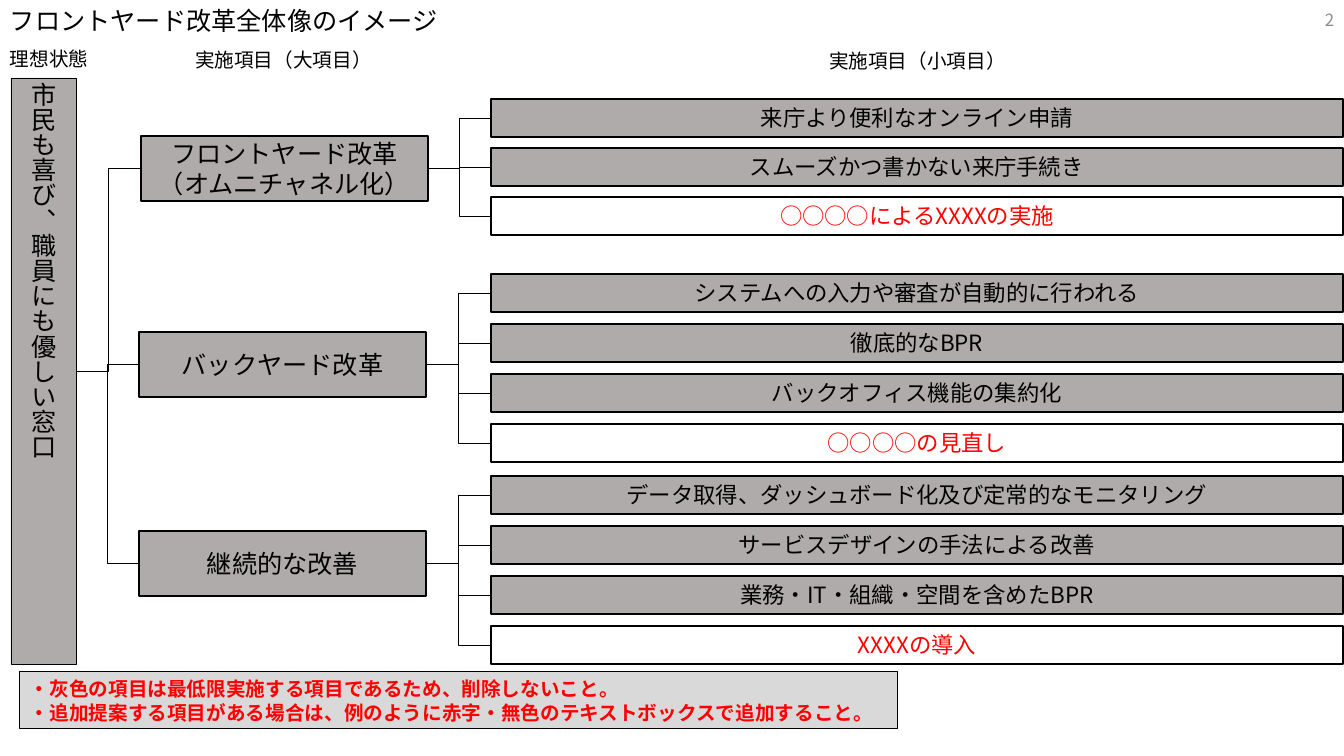
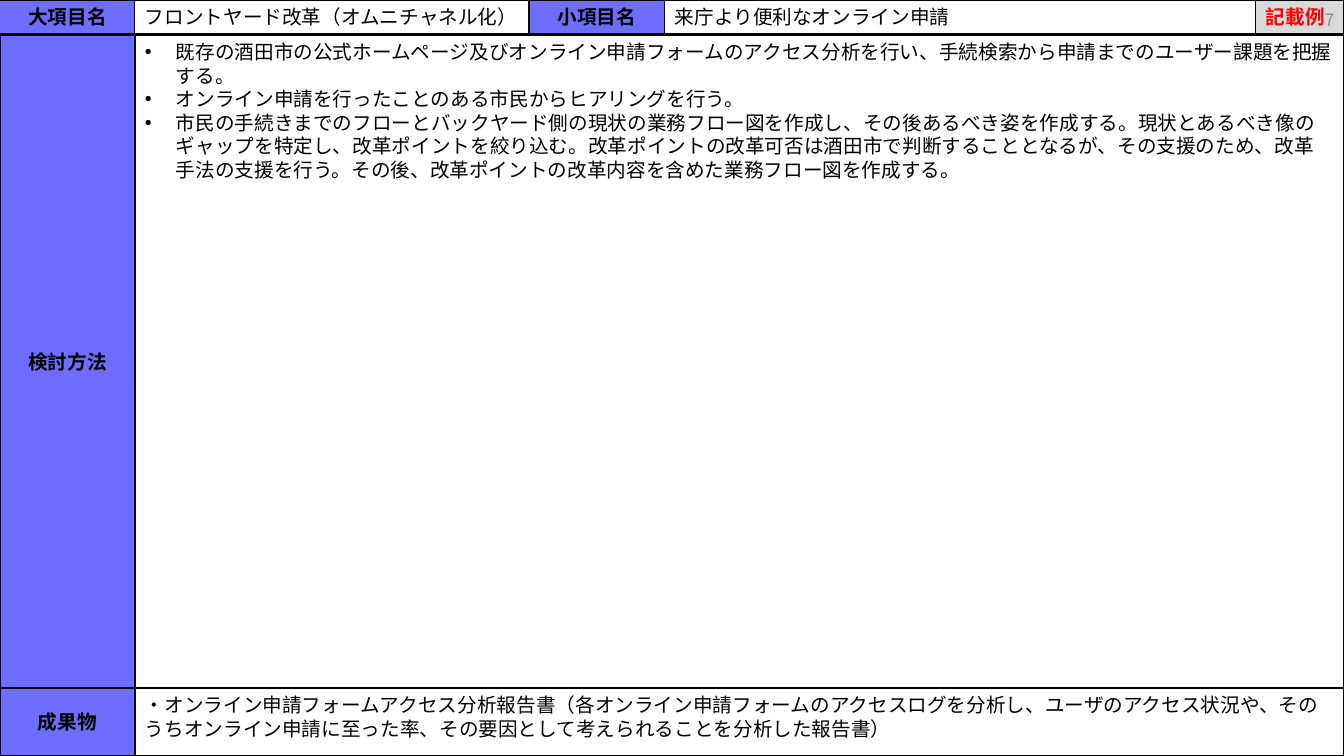
from lxml import etree
from pptx import Presentation
from pptx.dml.color import RGBColor
from pptx.enum.shapes import MSO_CONNECTOR, MSO_SHAPE
from pptx.enum.text import MSO_ANCHOR, PP_ALIGN
from pptx.oxml.ns import qn
from pptx.util import Emu, Pt

RECT, ELBOW = MSO_SHAPE.RECTANGLE, MSO_CONNECTOR.ELBOW
LEFT, MID, RIGHT = PP_ALIGN.LEFT, PP_ALIGN.CENTER, PP_ALIGN.RIGHT
TOP, CENTER = MSO_ANCHOR.TOP, MSO_ANCHOR.MIDDLE
WIDE, HIGH = 1344, 756
SCALE = 12192000 / WIDE
FONT = "Noto Sans CJK JP"
INK = {"black": "000000", "red": "FF0000", "gray": "AFABAB",
       "pale": "D9D9D9", "blue": "6D6DFF", "page": "8C8C8C"}


def px(n):
    return Emu(round(n * SCALE))


def box(slide, area, text, size=14, fill=None, line=None, ink="black",
        bold=False, align=LEFT, anchor=TOP):
    """Add a text box, or a rectangle when a line width is given."""
    place = [px(n) for n in area]
    if line:
        shape = slide.shapes.add_shape(RECT, *place)
        shape.shadow.inherit = False
        shape.line.color.rgb = RGBColor.from_string(INK["black"])
        shape.line.width = Pt(line)
        if fill:
            shape.fill.solid()
            shape.fill.fore_color.rgb = RGBColor.from_string(INK[fill])
        else:
            shape.fill.background()
    else:
        shape = slide.shapes.add_textbox(*place)
    frame = shape.text_frame
    frame.word_wrap = True
    frame.vertical_anchor = anchor
    frame.text = text
    for para in frame.paragraphs:
        para.alignment = align
        for run in para.runs:
            font = run.font
            font.name, font.size, font.bold = FONT, Pt(size), bold
            font.color.rgb = RGBColor.from_string(INK[ink])
            east = etree.SubElement(font._element, qn("a:ea"))
            east.set("typeface", FONT)
    return shape


deck = Presentation()
deck.slide_width, deck.slide_height = px(WIDE), px(HIGH)
blank = deck.slide_layouts[6]

# Overview tree
tree = deck.slides.add_slide(blank)
box(tree, (0, 0, WIDE, 40), "フロントヤード改革全体像のイメージ", 18)
for x, y, w, text, align in [
        (0, 42, 108, "理想状態", LEFT),
        (141, 43, 285, "実施項目（大項目）", MID),
        (775, 44, 285, "実施項目（小項目）", MID)]:
    box(tree, (x, y, w, 34), text, align=align)

goal = box(tree, (11, 78, 65, 586), "市民も喜び、職員にも優しい窓口", 18,
           "gray", 0.25, anchor=CENTER)
frame = goal.text_frame
frame.margin_left = frame.margin_right = px(4)
frame.margin_top = frame.margin_bottom = px(4)
frame._txBody.bodyPr.set("vert", "eaVert")

# Each branch: left, top, name, first row, row step, rows (the last is an added one)
branches = [
    (141, 136, "フロントヤード改革\n（オムニチャネル化）", 99, 49, [
        "来庁より便利なオンライン申請",
        "スムーズかつ書かない来庁手続き",
        "○○○○によるXXXXの実施"]),
    (139, 332, "バックヤード改革", 274, 50, [
        "システムへの入力や審査が自動的に行われる",
        "徹底的なBPR",
        "バックオフィス機能の集約化",
        "○○○○の見直し"]),
    (139, 531, "継続的な改善", 476, 50, [
        "データ取得、ダッシュボード化及び定常的なモニタリング",
        "サービスデザインの手法による改善",
        "業務・IT・組織・空間を含めたBPR",
        "XXXXの導入"]),
]
pairs = []
for x, y, name, first, step, rows in branches:
    main = box(tree, (x, y, 287, 65), name, 18, "gray", 1,
               align=MID, anchor=CENTER)
    pairs.append((goal, main))
    for i, text in enumerate(rows):
        extra = i == len(rows) - 1
        row = box(tree, (491, first + i * step, 852, 38), text, 16,
                  None if extra else "gray", 1, "red" if extra else "black",
                  align=MID, anchor=CENTER)
        pairs.append((main, row))

for start, end in pairs:
    wire = tree.shapes.add_connector(ELBOW, 0, 0, 0, 0)
    wire.begin_connect(start, 3)
    wire.end_connect(end, 1)
    wire.line.color.rgb = RGBColor.from_string(INK["black"])
    wire.line.width = Pt(0.5)
    etree.SubElement(wire._element.spPr, qn("a:effectLst"))

box(tree, (20, 672, 878, 57),
    "・灰色の項目は最低限実施する項目であるため、削除しないこと。\n"
    "・追加提案する項目がある場合は、例のように赤字・無色のテキストボックスで追加すること。",
    14, "pale", 0.75, "red", True)

# Detail form
form = deck.slides.add_slide(blank)
for x, y, w, h, text, line in [
        (529, 0, 136, 34, "小項目名", 0.75),
        (0, 35, 135, 653, "検討方法", 1),
        (0, 688, 135, 68, "成果物", 1),
        (0, 0, 135, 34, "大項目名", 0.75)]:
    box(form, (x, y, w, h), text, 14, "blue", line, bold=True,
        align=MID, anchor=CENTER)
box(form, (135, 0, 394, 34), "フロントヤード改革（オムニチャネル化）", line=0.75)
box(form, (665, 0, 679, 34), "来庁より便利なオンライン申請", line=0.75)
box(form, (1256, 0, 88, 34), "記載例", 14, "pale", 0.75, "red", True)

method = box(
    form, (135, 35, 1209, 653),
    "既存の酒田市の公式ホームページ及びオンライン申請フォームのアクセス分析を行い、"
    "手続検索から申請までのユーザー課題を把握する。\n"
    "オンライン申請を行ったことのある市民からヒアリングを行う。\n"
    "市民の手続きまでのフローとバックヤード側の現状の業務フロー図を作成し、"
    "その後あるべき姿を作成する。現状とあるべき像のギャップを特定し、改革ポイントを絞り込む。"
    "改革ポイントの改革可否は酒田市で判断することとなるが、その支援のため、"
    "改革手法の支援を行う。その後、改革ポイントの改革内容を含めた業務フロー図を作成する。",
    line=1)
for para in method.text_frame.paragraphs:
    props = para._p.get_or_add_pPr()
    props.set("marL", str(px(31)))
    props.set("indent", str(px(-31)))
    etree.SubElement(props, qn("a:buFont")).set("typeface", "Arial")
    etree.SubElement(props, qn("a:buChar")).set("char", "•")

box(form, (135, 688, 1209, 68),
    "・オンライン申請フォームアクセス分析報告書（各オンライン申請フォームのアクセスログを分析し、"
    "ユーザのアクセス状況や、そのうちオンライン申請に至った率、"
    "その要因として考えられることを分析した報告書）", line=1)

# Page numbers
for slide, num in [(tree, "2"), (form, "7")]:
    box(slide, (1042, 0, 302, 40), num, 12, ink="page",
        align=RIGHT, anchor=CENTER)

deck.save("out.pptx")
